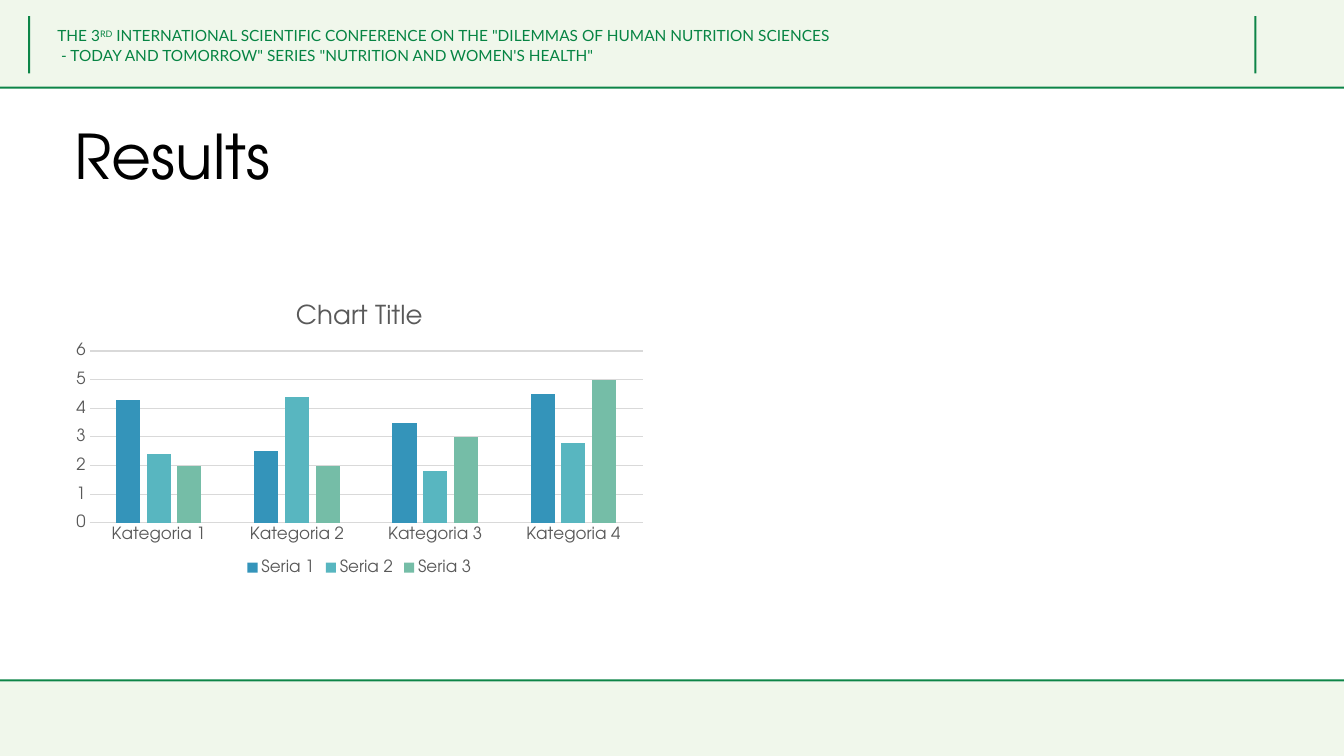
from pptx import Presentation
from pptx.chart.data import CategoryChartData
from pptx.dml.color import RGBColor
from pptx.enum.chart import XL_CHART_TYPE as CT, XL_LEGEND_POSITION as LP, XL_TICK_MARK as TM
from pptx.enum.shapes import MSO_SHAPE as SHAPE
from pptx.enum.text import MSO_ANCHOR as ANCHOR
from pptx.util import Inches, Pt

W, H = 13.33, 7.5
RULE = 0.02
PALE = RGBColor(0xF0, 0xF7, 0xEB)
GREEN = RGBColor(0x0D, 0x85, 0x47)
HEADER_GREEN = RGBColor(0x06, 0x84, 0x43)
BLACK = RGBColor(0, 0, 0)
GREY = RGBColor(0x59, 0x59, 0x59)
LIGHT_GREY = RGBColor(0xD9, 0xD9, 0xD9)
BLUE = RGBColor(0x34, 0x94, 0xBA)
TEAL = RGBColor(0x58, 0xB6, 0xC0)
MINT = RGBColor(0x75, 0xBD, 0xA7)
HEADING_FONT = "TeX Gyre Adventor"
HEADER_FONT = "Lato"

HEADER_LINES = [
    [("THE 3", 0), ("RD", 30000),
     (' INTERNATIONAL SCIENTIFIC CONFERENCE ON THE "DILEMMAS OF HUMAN NUTRITION SCIENCES', 0)],
    [(' - TODAY AND TOMORROW" SERIES "NUTRITION AND WOMEN\'S HEALTH"', 0)],
]
CATEGORIES = [f"Kategoria {n}" for n in range(1, 5)]
SERIES = [
    ("Seria 1", (4.3, 2.5, 3.5, 4.5), BLUE),
    ("Seria 2", (2.4, 4.4, 1.8, 2.8), TEAL),
    ("Seria 3", (2, 2, 3, 5), MINT),
]


def set_attrs(obj, **values):
    for name, value in values.items():
        setattr(obj, name, value)


def set_font(font, size, color, name=HEADING_FONT):
    set_attrs(font, size=Pt(size), name=name, bold=False)
    font.color.rgb = color


def set_line(line, color):
    line.color.rgb = color
    line.width = Pt(0.75)


def add_rect(slide, x, y, w, h, color):
    sp = slide.shapes.add_shape(SHAPE.RECTANGLE, *map(Inches, (x, y, w, h)))
    sp.shadow.inherit = False
    sp.fill.solid()
    sp.fill.fore_color.rgb = color
    sp.line.fill.background()


def add_text(slide, box, **paragraph):
    tf = slide.shapes.add_textbox(*map(Inches, box)).text_frame
    tf.word_wrap = True
    p = tf.paragraphs[0]
    set_attrs(p, **paragraph)
    return tf, p


def header(slide, x, y, w, h):
    add_rect(slide, x, y, w, h, PALE)
    add_rect(slide, x, y + h - RULE / 2, w, RULE, GREEN)
    for bar_x in (0.28, 12.44):
        add_rect(slide, x + bar_x, y + 0.16, RULE, 0.57, GREEN)
    tf, p = add_text(slide, (x + 0.47, y + 0.2, 10.35, 0.48),
                     line_spacing=1.07, space_after=Pt(8))
    for i, line in enumerate(HEADER_LINES):
        if i:
            p.add_line_break()
        for text, baseline in line:
            r = p.add_run()
            r.text = text
            set_font(r.font, 11, HEADER_GREEN, HEADER_FONT)
            if baseline:
                r._r.get_or_add_rPr().set("baseline", str(baseline))


def footer(slide, x, y, w, h):
    add_rect(slide, x, y, w, h, PALE)
    add_rect(slide, x, y - RULE, w, RULE, GREEN)


def title(slide, *box):
    tf, p = add_text(slide, box, line_spacing=0.9)
    tf.vertical_anchor = ANCHOR.MIDDLE
    r = p.add_run()
    r.text = "Results"
    set_font(r.font, 44, BLACK)


def results_chart(slide, *box):
    data = CategoryChartData()
    data.categories = CATEGORIES
    for name, values, color in SERIES:
        data.add_series(name, values)
    chart = slide.shapes.add_chart(CT.COLUMN_CLUSTERED, *map(Inches, box), data).chart
    set_font(chart.font, 10, BLACK)
    set_attrs(chart, has_title=True, has_legend=True)
    tf = chart.chart_title.text_frame
    tf.text = "Chart Title"
    set_font(tf.paragraphs[0].runs[0].font, 18.6, GREY)
    chart.chart_title.include_in_layout = False
    set_attrs(chart.legend, position=LP.BOTTOM, include_in_layout=False)
    set_font(chart.legend.font, 12, GREY)
    plot = chart.plots[0]
    set_attrs(plot, gap_width=219, overlap=-27, vary_by_categories=False)
    for series, (name, values, color) in zip(plot.series, SERIES):
        series.format.fill.solid()
        series.format.fill.fore_color.rgb = color
    for axis in (chart.category_axis, chart.value_axis):
        set_attrs(axis, major_tick_mark=TM.NONE, minor_tick_mark=TM.NONE)
        set_font(axis.tick_labels.font, 12, GREY)
    set_line(chart.category_axis.format.line, LIGHT_GREY)
    chart.value_axis.format.line.fill.background()
    set_line(chart.value_axis.major_gridlines.format.line, LIGHT_GREY)


def main():
    prs = Presentation()
    set_attrs(prs, slide_width=Inches(W), slide_height=Inches(H))
    slide = prs.slides.add_slide(prs.slide_layouts[6])
    header(slide, 0, 0, W, 0.87)
    footer(slide, 0, 6.76, W, H - 6.76)
    title(slide, 0.64, 1.03, 11.7, 1.1)
    results_chart(slide, 0.64, 2.84, 5.85, 2.91)
    prs.save("out.pptx")


if __name__ == "__main__":
    main()
